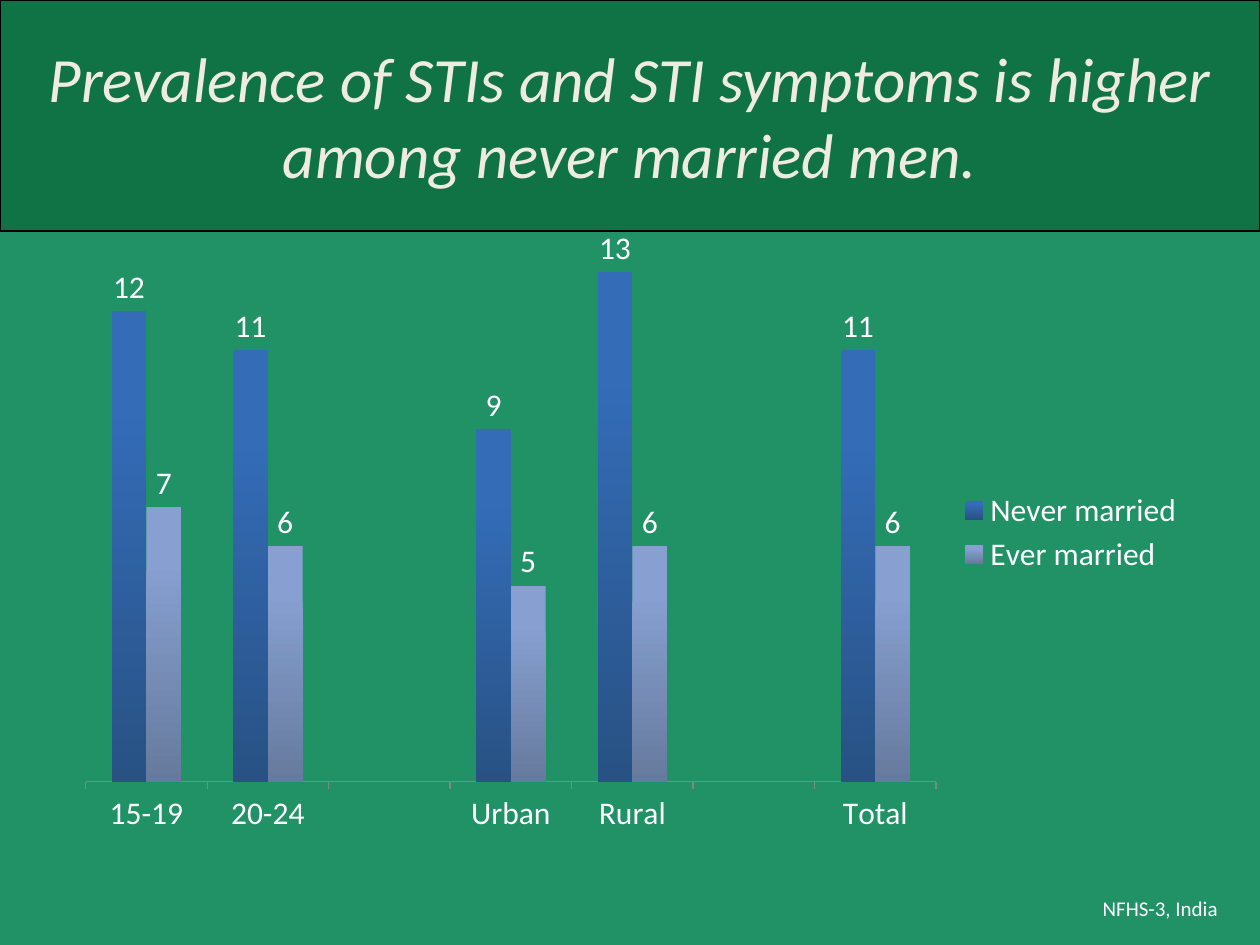
from lxml import etree
from pptx import Presentation
from pptx import util as u
from pptx.chart.data import CategoryChartData
from pptx.dml.color import RGBColor
from pptx.enum import chart as ch, shapes, text
from pptx.oxml import parse_xml
from pptx.oxml.ns import nsdecls, qn

COLORS = {
    "back": "219166", "title": "005828", "cream": "EEECE1", "white": "FFFFFF",
    "black": "000000", "axis": "868686",
}
GRADIENTS = [("346CB8", "285284"), ("87A0D1", "667A9D")]
PLOT = {"x": 0.02, "y": 0.02, "w": 0.75, "h": 0.88}


def rgb(name):
    return RGBColor.from_string(COLORS.get(name, name))


class Deck:
    """Holds the style and the current slide, and draws each kind of element."""

    def __init__(self, width, height, font="Calibri"):
        self.prs = Presentation()
        self.prs.slide_width, self.prs.slide_height = u.Pt(width), u.Pt(height)
        self.font = font

    def slide(self, back):
        self.s = self.prs.slides.add_slide(self.prs.slide_layouts[6])
        fill = self.s.background.fill
        fill.solid()
        fill.fore_color.rgb = rgb(back)

    def style(self, font, color, **values):
        for name, value in {"name": self.font, **values}.items():
            setattr(font, name, value)
        font.color.rgb = rgb(color)

    def box(self, words, at, fill, color, alpha=None, line=None, **values):
        sp = self.s.shapes.add_shape(shapes.MSO_SHAPE.RECTANGLE, *map(u.Pt, at))
        sp.shadow.inherit = False
        sp.fill.solid()
        sp.fill.fore_color.rgb = rgb(fill)
        if alpha:
            clr = sp.fill._xPr.find(".//" + qn("a:srgbClr"))
            etree.SubElement(clr, qn("a:alpha")).set("val", str(alpha * 1000))
        if line:
            sp.line.color.rgb = rgb(line)
            sp.line.width = u.Pt(1)
        else:
            sp.line.fill.background()
        tf = sp.text_frame
        tf.word_wrap = True
        tf.vertical_anchor = text.MSO_ANCHOR.MIDDLE
        p = tf.paragraphs[0]
        p.alignment = text.PP_ALIGN.CENTER
        r = p.add_run()
        r.text = words
        self.style(r.font, color, **values)

    def columns(self, cats, series, at, top, color, size):
        data = CategoryChartData()
        data.categories = cats
        for name, vals in series.items():
            data.add_series(name, vals)
        chart = self.s.shapes.add_chart(
            ch.XL_CHART_TYPE.COLUMN_CLUSTERED, *map(u.Pt, at), data).chart
        self.style(chart.font, color, size=u.Pt(size))
        chart.has_title = False
        chart.has_legend = True
        chart.legend.position = ch.XL_LEGEND_POSITION.RIGHT
        chart.legend.include_in_layout = False
        axis = chart.value_axis
        for name, value in {"visible": False, "has_major_gridlines": False,
                            "minimum_scale": 0, "maximum_scale": top}.items():
            setattr(axis, name, value)
        chart.category_axis.major_tick_mark = ch.XL_TICK_MARK.OUTSIDE
        chart.category_axis.format.line.color.rgb = rgb("axis")
        plot = chart.plots[0]
        for name, value in {"gap_width": 150, "overlap": 0, "vary_by_categories": False,
                            "has_data_labels": True}.items():
            setattr(plot, name, value)
        plot.data_labels.show_value = True
        plot.data_labels.position = ch.XL_LABEL_POSITION.OUTSIDE_END
        for ser, shades in zip(plot.series, GRADIENTS):
            fill = ser.format.fill
            fill.gradient()
            fill.gradient_angle = 270
            for stop, shade, position in zip(fill.gradient_stops, shades, (0.2, 1)):
                stop.color.rgb = rgb(shade)
                stop.position = position
        self.place_plot(chart)

    def place_plot(self, chart):
        area = chart._chartSpace.chart.plotArea
        for old in area.findall(qn("c:layout")):
            area.remove(old)
        modes = '<c:layoutTarget val="inner"/><c:xMode val="edge"/><c:yMode val="edge"/>'
        sizes = "".join(f'<c:{k} val="{v}"/>' for k, v in PLOT.items())
        area.insert(0, parse_xml(
            f'<c:layout {nsdecls("c")}><c:manualLayout>{modes}{sizes}'
            '</c:manualLayout></c:layout>'))


def main():
    deck = Deck(720, 540)
    deck.slide("back")
    deck.box("Prevalence of STIs and STI symptoms is higher among never married men.",
             (0, 0, 720, 132), "title", "cream", alpha=51, line="black",
             size=u.Pt(36), italic=True)
    deck.box("NFHS-3, India", (606, 498, 114, 42), "back", "white", size=u.Pt(12))
    deck.columns(
        ["15-19", "20-24", "", "Urban", "Rural", "", "Total"],
        {"Never married": [12, 11, None, 9, 13, None, 11],
         "Ever married": [7, 6, None, 5, 6, None, 6]},
        (36, 126, 648, 356.4), top=14, color="white", size=18)
    deck.prs.save("out.pptx")


if __name__ == "__main__":
    main()
